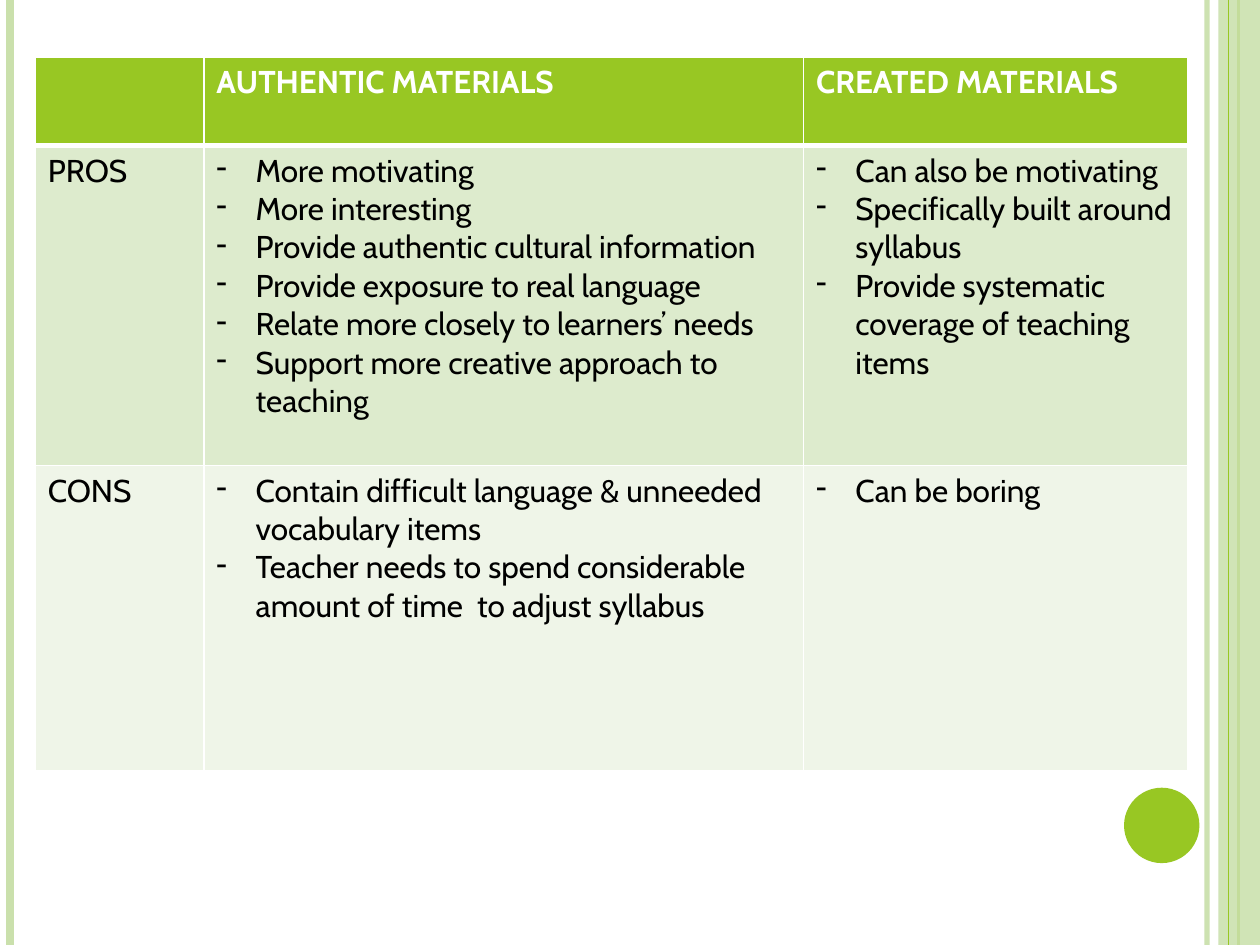
from dataclasses import dataclass

from lxml.etree import SubElement
from pptx import Presentation
from pptx.dml.color import RGBColor as RGB
from pptx.enum.shapes import MSO_CONNECTOR as CONN, MSO_SHAPE as SHAPE
from pptx.oxml import parse_xml
from pptx.oxml.ns import nsdecls, qn
from pptx.util import Cm, Pt


@dataclass(frozen=True)
class Theme:
    """Colours, font and sizes of the slide."""
    accent: str = "98C723"
    soft: str = "CAE0AC"
    pros: str = "DDEBCD"
    cons: str = "EFF5E8"
    white: str = "FFFFFF"
    black: str = "000000"
    font: str = "Cabin"
    size: int = 18
    rule: int = 1
    header_rule: int = 3


@dataclass(frozen=True)
class Box:
    """A region in centimetres."""
    x: float
    y: float
    w: float
    h: float


THEME = Theme()
SLIDE = Box(0, 0, 25.4, 19.05)
TABLE = Box(0.71, 1.15, 23.24, 14.38)
COLS = (3.4, 12.09, 7.75)
ROWS = (1.78, 6.45, 6.15)
HEADINGS = ("", "AUTHENTIC MATERIALS", "CREATED MATERIALS")
PROS = (
    "PROS",
    ["More motivating",
     "More interesting",
     "Provide authentic cultural information",
     "Provide exposure to real language",
     "Relate more closely to learners’ needs",
     "Support more creative approach to teaching"],
    ["Can also be motivating",
     "Specifically built around syllabus",
     "Provide systematic coverage of teaching items"],
)
CONS = (
    "CONS",
    ["Contain difficult language & unneeded vocabulary items",
     "Teacher needs to spend considerable amount of time  to adjust syllabus"],
    ["Can be boring"],
)


def set_alpha(fill_parent, percent):
    """Make the solid fill under an element partly transparent."""
    clr = fill_parent.find(qn("a:solidFill"))[0]
    SubElement(clr, qn("a:alpha"), val=str(percent * 1000))


def add_rule(s, box, x, color, width, alpha=100):
    """Draw a vertical line over the full height of the box."""
    left = Cm(box.x + x)
    line = s.shapes.add_connector(
        CONN.STRAIGHT, left, Cm(box.y), left, Cm(box.y + box.h))
    line.line.color.rgb = RGB.from_string(color)
    line.line.width = Pt(width)
    if alpha < 100:
        set_alpha(line.line._get_or_add_ln(), alpha)
    SubElement(line._element.spPr, qn("a:effectLst"))


def add_panel(s, kind, box, color, alpha=100):
    """Draw a plain filled shape without outline."""
    sp = s.shapes.add_shape(kind, Cm(box.x), Cm(box.y), Cm(box.w), Cm(box.h))
    sp.shadow.inherit = False
    sp.fill.solid()
    sp.fill.fore_color.rgb = RGB.from_string(color)
    sp.line.fill.background()
    if alpha < 100:
        set_alpha(sp._element.spPr, alpha)


def add_frame(s, box):
    """Place the side rules, the right band and the dot."""
    add_rule(s, box, 24.33, THEME.soft, 3, 93)
    add_rule(s, box, 0.2, THEME.soft, 4.5)
    add_rule(s, box, 24.97, THEME.accent, 1.5)
    band = Box(box.x + 24.56, box.y, box.w - 24.56, box.h)
    add_panel(s, SHAPE.RECTANGLE, band, THEME.soft, 87)
    add_rule(s, box, 24.77, THEME.accent, 0.75)
    dot = Box(box.x + 22.66, box.y + 15.88, 1.52, 1.52)
    add_panel(s, SHAPE.OVAL, dot, THEME.accent)


def set_borders(cell, top, bottom):
    """Give a cell white borders of the stated widths."""
    tc_pr = cell._tc.get_or_add_tcPr()
    widths = {"L": THEME.rule, "R": THEME.rule, "T": top, "B": bottom}
    for i, (side, width) in enumerate(widths.items()):
        tc_pr.insert(i, parse_xml(
            f'<a:ln{side} {nsdecls("a")} w="{Pt(width)}"><a:solidFill>'
            f'<a:srgbClr val="{THEME.white}"/></a:solidFill></a:ln{side}>'))


def add_dash(p):
    """Turn a paragraph into a dashed list item."""
    p_pr = p._p.get_or_add_pPr()
    p_pr.set("marL", str(Cm(0.79)))
    p_pr.set("indent", str(-Cm(0.79)))
    SubElement(p_pr, qn("a:buChar"), char="-")


def fill_cell(cell, content, color, fill, bold):
    """Write a label or a dashed list into a cell."""
    cell.fill.solid()
    cell.fill.fore_color.rgb = RGB.from_string(fill)
    tf = cell.text_frame
    is_list = isinstance(content, list)
    tf.text = "\n".join(content) if is_list else content
    for p in tf.paragraphs:
        if is_list:
            add_dash(p)
        for r in p.runs:
            r.font.name = THEME.font
            r.font.size = Pt(THEME.size)
            r.font.bold = bold
            r.font.color.rgb = RGB.from_string(color)


def add_comparison(s, box):
    """Place the table of pros and cons."""
    table = s.shapes.add_table(
        len(ROWS), len(COLS),
        Cm(box.x), Cm(box.y), Cm(box.w), Cm(box.h)).table
    for column, width in zip(table.columns, COLS):
        column.width = Cm(width)
    for row, height in zip(table.rows, ROWS):
        row.height = Cm(height)
    styles = (
        (HEADINGS, THEME.white, THEME.accent, True),
        (PROS, THEME.black, THEME.pros, False),
        (CONS, THEME.black, THEME.cons, False),
    )
    for i, (contents, color, fill, bold) in enumerate(styles):
        top = THEME.header_rule if i == 1 else THEME.rule
        bottom = THEME.header_rule if i == 0 else THEME.rule
        for cell, content in zip(table.rows[i].cells, contents):
            fill_cell(cell, content, color, fill, bold)
            set_borders(cell, top, bottom)


def main():
    """Build and save the slide."""
    prs = Presentation()
    prs.slide_width, prs.slide_height = Cm(SLIDE.w), Cm(SLIDE.h)
    s = prs.slides.add_slide(prs.slide_layouts[6])
    add_frame(s, SLIDE)
    add_comparison(s, TABLE)
    prs.save("out.pptx")


if __name__ == "__main__":
    main()
